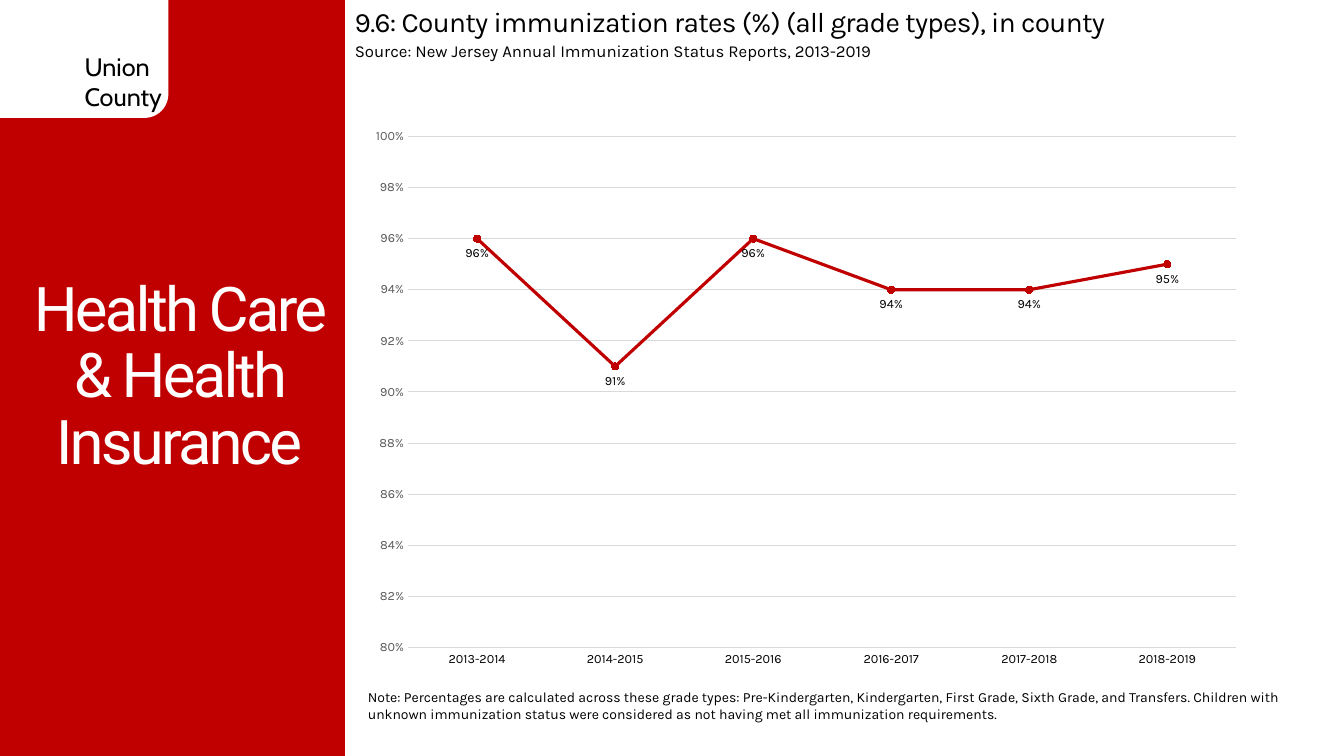
from pptx import Presentation
from pptx.chart.data import CategoryChartData
from pptx.dml.color import RGBColor
from pptx.enum.chart import XL_CHART_TYPE as ChartType, XL_LABEL_POSITION as LabelPos
from pptx.enum.chart import XL_MARKER_STYLE as Marker, XL_TICK_MARK as Tick
from pptx.enum.shapes import MSO_SHAPE as Preset
from pptx.enum.text import MSO_ANCHOR as Anchor, MSO_AUTO_SIZE as AutoSize, PP_ALIGN as Align
from pptx.util import Inches, Pt

COLORS = {"red": "C00000", "white": "FFFFFF", "black": "000000", "gray": "595959", "grid": "D9D9D9"}

RATES = {
    "2013-2014": 0.96,
    "2014-2015": 0.91,
    "2015-2016": 0.96,
    "2016-2017": 0.94,
    "2017-2018": 0.94,
    "2018-2019": 0.95,
}


class SlideBuilder:
    def __init__(self, slide, body_font="Karla"):
        self.slide = slide
        self.body_font = body_font

    def color(self, name):
        return RGBColor.from_string(COLORS[name])

    def style(self, font, size, color="black", face=None):
        font.name = face or self.body_font
        font.size = Pt(size)
        font.color.rgb = self.color(color)

    def stroke(self, line, color, width):
        line.color.rgb = self.color(color)
        line.width = Pt(width)

    def panel(self, preset, box, fill):
        panel = self.slide.shapes.add_shape(preset, *map(Inches, box))
        panel.shadow.inherit = False
        panel.fill.solid()
        panel.fill.fore_color.rgb = self.color(fill)
        panel.line.fill.background()

    def text(self, box, lines, size, color="black", face=None, tracking=0, centered=False):
        frame = self.slide.shapes.add_textbox(*map(Inches, box)).text_frame
        frame.word_wrap = True
        frame.auto_size = AutoSize.NONE if centered else AutoSize.SHAPE_TO_FIT_TEXT
        frame.text = "\n".join(lines)
        if centered:
            frame.vertical_anchor = Anchor.MIDDLE
        for paragraph in frame.paragraphs:
            self.style(paragraph.font, size, color, face)
            if centered:
                paragraph.alignment = Align.CENTER
                paragraph.line_spacing = 0.9
            if tracking:
                for run in paragraph.runs:
                    run.font._element.set("spc", str(int(tracking * 100)))

    def axis(self, axis, color):
        axis.major_tick_mark = axis.minor_tick_mark = Tick.NONE
        self.style(axis.tick_labels.font, 9, color)

    def line_chart(self, box, name, rates):
        data = CategoryChartData(number_format="0%")
        data.categories = list(rates)
        data.add_series(name, list(rates.values()))
        chart = self.slide.shapes.add_chart(
            ChartType.LINE_MARKERS, *map(Inches, box), data).chart
        chart.has_title = chart.has_legend = False
        self.style(chart.font, 10, face="Calibri")

        years, percent = chart.category_axis, chart.value_axis
        self.axis(years, "black")
        self.stroke(years.format.line, "grid", 0.75)
        self.axis(percent, "gray")
        percent.format.line.fill.background()
        percent.minimum_scale, percent.maximum_scale, percent.major_unit = 0.8, 1, 0.02
        percent.tick_labels.number_format = "0%"
        percent.tick_labels.number_format_is_linked = False
        self.stroke(percent.major_gridlines.format.line, "grid", 0.75)

        plot = chart.plots[0]
        plot.vary_by_categories = False
        series = plot.series[0]
        series.smooth = False
        self.stroke(series.format.line, "red", 2.25)
        series.marker.style = Marker.CIRCLE
        series.marker.size = 5
        series.marker.format.fill.solid()
        series.marker.format.fill.fore_color.rgb = self.color("red")
        self.stroke(series.marker.format.line, "red", 0.75)

        labels = series.data_labels
        labels.show_value = True
        labels.position = LabelPos.BELOW
        labels.number_format = "0%"
        labels.number_format_is_linked = False
        self.style(labels.font, 9)


def main():
    deck = Presentation()
    deck.slide_width, deck.slide_height = Inches(13.33), Inches(7.5)
    page = SlideBuilder(deck.slides.add_slide(deck.slide_layouts[6]))

    page.panel(Preset.RECTANGLE, (0, 0, 3.42, 7.5), "red")
    page.panel(Preset.ROUNDED_RECTANGLE, (-0.33, -0.25, 2, 1.42), "white")
    page.text((0.74, 0.46, 1, 0.71), ["Union", "County"], 18, face="Cabin")
    page.text((0, 0.75, 3.55, 6), ["Health Care & Health Insurance"], 44, "white",
              face="Roboto", tracking=-2, centered=True)
    page.text((3.42, 0, 9.86, 0.44),
              ["9.6: County immunization rates (%) (all grade types), in county"], 20, tracking=-0.5)
    page.text((3.42, 0.36, 9.19, 0.3),
              ["Source: New Jersey Annual Immunization Status Reports, 2013-2019"], 12)
    page.text((3.55, 6.78, 9.28, 0.44),
              ["Note: Percentages are calculated across these grade types: Pre-Kindergarten, "
               "Kindergarten, First Grade, Sixth Grade, and Transfers. Children with unknown "
               "immunization status were considered as not having met all immunization "
               "requirements."], 10)
    page.line_chart((3.55, 1.17, 8.89, 5.55), "Series 1", RATES)

    deck.save("out.pptx")


if __name__ == "__main__":
    main()
